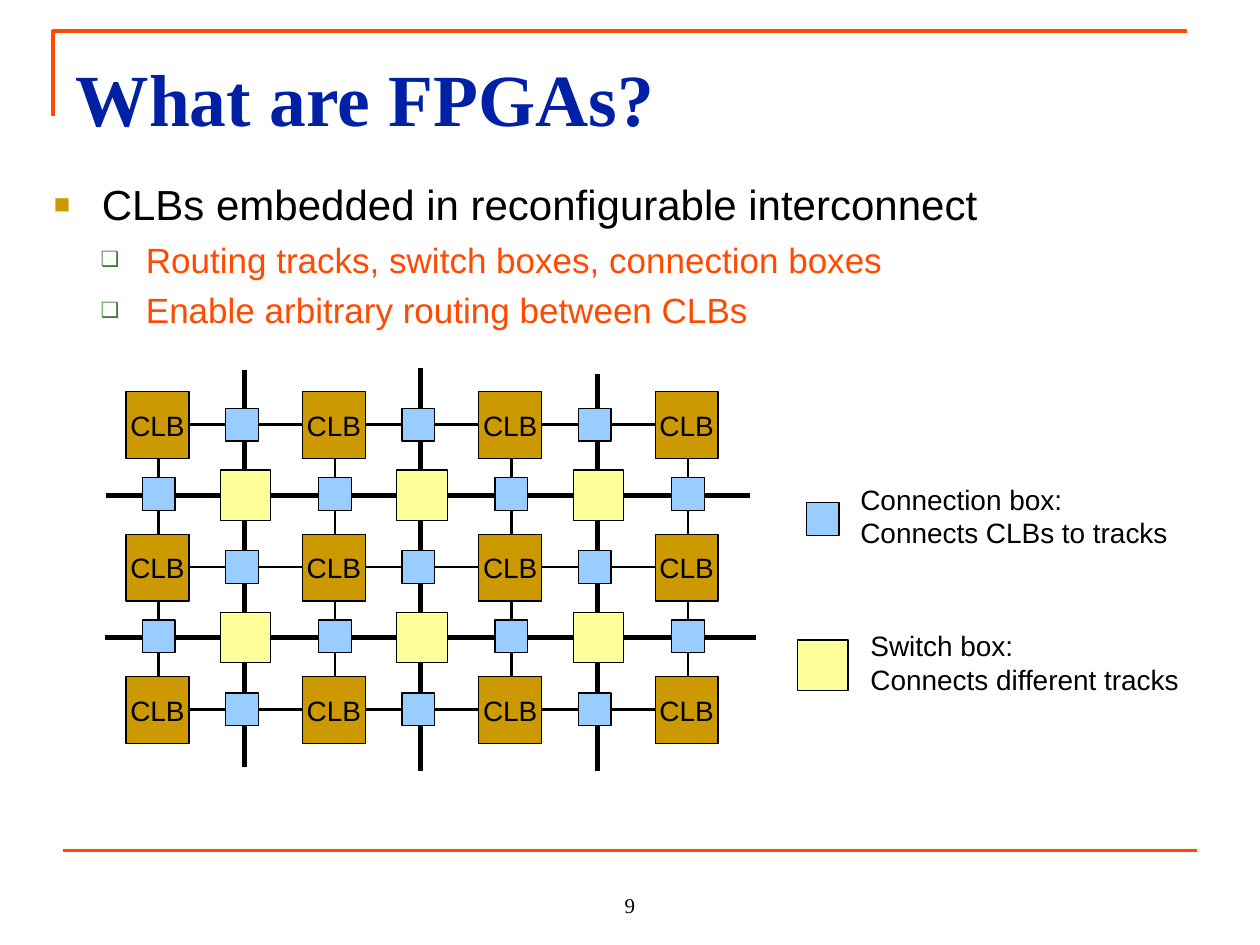
from itertools import product
from typing import NamedTuple

from lxml.etree import SubElement
from pptx import Presentation
from pptx.dml.color import RGBColor as RGB
from pptx.enum.shapes import MSO_CONNECTOR as Conn, MSO_SHAPE as Shape
from pptx.enum.text import MSO_ANCHOR as Anchor, PP_ALIGN as Align
from pptx.oxml.ns import qn
from pptx.util import Inches, Pt

BLACK = RGB(0x00, 0x00, 0x00)
BLUE = RGB(0x00, 0x21, 0xA5)
ORANGE = RGB(0xFF, 0x4A, 0x00)
GOLD = RGB(0xCC, 0x99, 0x00)
GREEN = RGB(0x3B, 0x81, 0x2F)
SKY = RGB(0x99, 0xCC, 0xFF)
LEMON = RGB(0xFF, 0xFF, 0x99)
SANS, SERIF = "Arial", "Times New Roman"
COLS, ROWS = 4, 3
STEP_X, STEP_Y = 1.4, 1.13


class Box(NamedTuple):
    wide: float
    high: float
    fill: RGB
    text: str = ""


class Point(NamedTuple):
    text: str
    size: int
    color: RGB
    left: float
    hang: float
    mark: str
    tint: RGB
    scale: int


class Key(NamedTuple):
    box: Box
    x: float
    y: float
    text: str
    left: float
    top: float


CLB = Box(0.5, 0.53, GOLD, "CLB")
JOIN = Box(0.26, 0.26, SKY)
SWITCH = Box(0.4, 0.4, LEMON)

POINTS = [
    Point("CLBs embedded in reconfigurable interconnect",
          24, BLACK, 0.38, -0.38, "■", GOLD, 65),
    *(Point(text, 20, ORANGE, 0.73, -0.36, "❑", GREEN, 60) for text in (
        "Routing tracks, switch boxes, connection boxes",
        "Enable arbitrary routing between CLBs")),
]
KEYS = [
    Key(JOIN, 6.4, 3.99, "Connection box:\nConnects CLBs to tracks", 6.73, 3.78),
    Key(SWITCH, 6.33, 5.08, "Switch box:\nConnects different tracks", 6.81, 4.94),
]


def style(frame, size: float, color: RGB, face: str = SANS, bold: bool = False) -> None:
    for para in frame.paragraphs:
        for run in para.runs:
            font = run.font
            font.size, font.name, font.bold = Pt(size), face, bold
            font.color.rgb = color


def add_text(slide, x: float, y: float, wide: float, high: float, text: str):
    frame = slide.shapes.add_textbox(
        Inches(x), Inches(y), Inches(wide), Inches(high)).text_frame
    frame.word_wrap = True
    frame.text = text
    return frame


def add_line(slide, x1: float, y1: float, x2: float, y2: float,
             width: float, color: RGB = BLACK) -> None:
    line = slide.shapes.add_connector(
        Conn.STRAIGHT, Inches(x1), Inches(y1), Inches(x2), Inches(y2))
    line.line.color.rgb = color
    line.line.width = Pt(width)
    SubElement(line._element.spPr, qn("a:effectLst"))


def add_box(slide, box: Box, x: float, y: float) -> None:
    shape = slide.shapes.add_shape(
        Shape.RECTANGLE, Inches(x), Inches(y), Inches(box.wide), Inches(box.high))
    shape.shadow.inherit = False
    shape.fill.solid()
    shape.fill.fore_color.rgb = box.fill
    shape.line.color.rgb = BLACK
    shape.line.width = Pt(0.75)
    if box.text:
        frame = shape.text_frame
        frame.text = box.text
        frame.word_wrap = False
        frame.vertical_anchor = Anchor.MIDDLE
        frame.paragraphs[0].alignment = Align.CENTER
        style(frame, 16, BLACK)


def add_frame(slide) -> None:
    pen = slide.shapes.build_freeform(Inches(0.42), Inches(0.92))
    pen.add_line_segments(
        [(Inches(0.42), Inches(0.25)), (Inches(9.42), Inches(0.25))], close=False)
    edge = pen.convert_to_shape()
    edge.shadow.inherit = False
    edge.fill.background()
    edge.line.color.rgb = ORANGE
    edge.line.width = Pt(2.25)
    add_line(slide, 0.5, 6.75, 9.5, 6.75, 2.25, ORANGE)


def add_title(slide) -> None:
    title = slide.shapes.title
    title.left, title.top = Inches(0.5), Inches(0.3)
    title.width, title.height = Inches(9), Inches(1.03)
    frame = title.text_frame
    frame.text = "What are FPGAs?"
    frame.vertical_anchor = Anchor.TOP
    frame.margin_top = Inches(0.12)
    frame.paragraphs[0].alignment = Align.LEFT
    style(frame, 42, BLUE, SERIF, True)


def add_points(slide) -> None:
    frame = add_text(slide, 0.33, 1.33, 9.33, 1.42,
                     "\n".join(item.text for item in POINTS))
    frame.margin_top = Inches(0.09)
    for row, (para, item) in enumerate(zip(frame.paragraphs, POINTS)):
        para.level = min(row, 1)
        para.space_before = Pt(5 if row else 0)
        props = para._p.get_or_add_pPr()
        props.set("marL", str(Inches(item.left)))
        props.set("indent", str(Inches(item.hang)))
        tint = SubElement(props, qn("a:buClr"))
        SubElement(tint, qn("a:srgbClr"), val=str(item.tint))
        SubElement(props, qn("a:buSzPct"), val=str(item.scale * 1000))
        SubElement(props, qn("a:buFont"), typeface=SANS)
        SubElement(props, qn("a:buChar"), char=item.mark)
        for run in para.runs:
            run.font.size, run.font.name = Pt(item.size), SANS
            run.font.color.rgb = item.color


def add_grid(slide) -> None:
    for row, ends in enumerate((
            ((0.84, 3.06), (2.96, 5.11), (4.37, 5.95)),
            ((0.83, 3.05), (2.95, 5.1), (4.36, 6)))):
        y = 3.93 + row * STEP_Y
        for start, end in ends:
            add_line(slide, start, y, end, y, 3)
    for col, (top, end) in enumerate(((2.94, 6.09), (2.92, 6.12), (2.97, 6.12))):
        x = 1.94 + col * STEP_X
        add_line(slide, x, top, x, end, 3)

    for row, col in product(range(ROWS), range(COLS)):
        x, y = 1 + col * STEP_X, 3.11 + row * STEP_Y
        add_box(slide, CLB, x, y)
        if col < COLS - 1:
            mid = y + 0.26
            add_line(slide, x + 0.5, mid, x + 0.8, mid, 1.5)
            add_line(slide, x + 1.05, mid, x + STEP_X, mid, 1.5)
            add_box(slide, JOIN, x + 0.79, y + 0.13)
        if row < ROWS - 1:
            mid = x + 0.26
            add_line(slide, mid, y + 0.53, mid, y + 0.68, 1.5)
            add_line(slide, mid, y + 0.94, mid, y + STEP_Y, 1.5)
            add_box(slide, JOIN, x + 0.13, y + 0.68)
        if col < COLS - 1 and row < ROWS - 1:
            add_box(slide, SWITCH, x + 0.75, y + 0.62)


def add_keys(slide) -> None:
    for key in KEYS:
        add_box(slide, key.box, key.x, key.y)
        style(add_text(slide, key.left, key.top, 2.75, 0.64, key.text), 16, BLACK)


def main() -> None:
    deck = Presentation()
    deck.slide_width, deck.slide_height = Inches(10), Inches(7.5)
    slide = deck.slides.add_slide(deck.slide_layouts[5])
    add_frame(slide)
    add_title(slide)
    add_grid(slide)
    add_points(slide)
    add_keys(slide)
    page = add_text(slide, 4, 6.83, 2, 0.5, "9")
    page.vertical_anchor = Anchor.BOTTOM
    page.paragraphs[0].alignment = Align.CENTER
    style(page, 12, BLACK, SERIF)
    deck.save("out.pptx")


if __name__ == "__main__":
    main()
